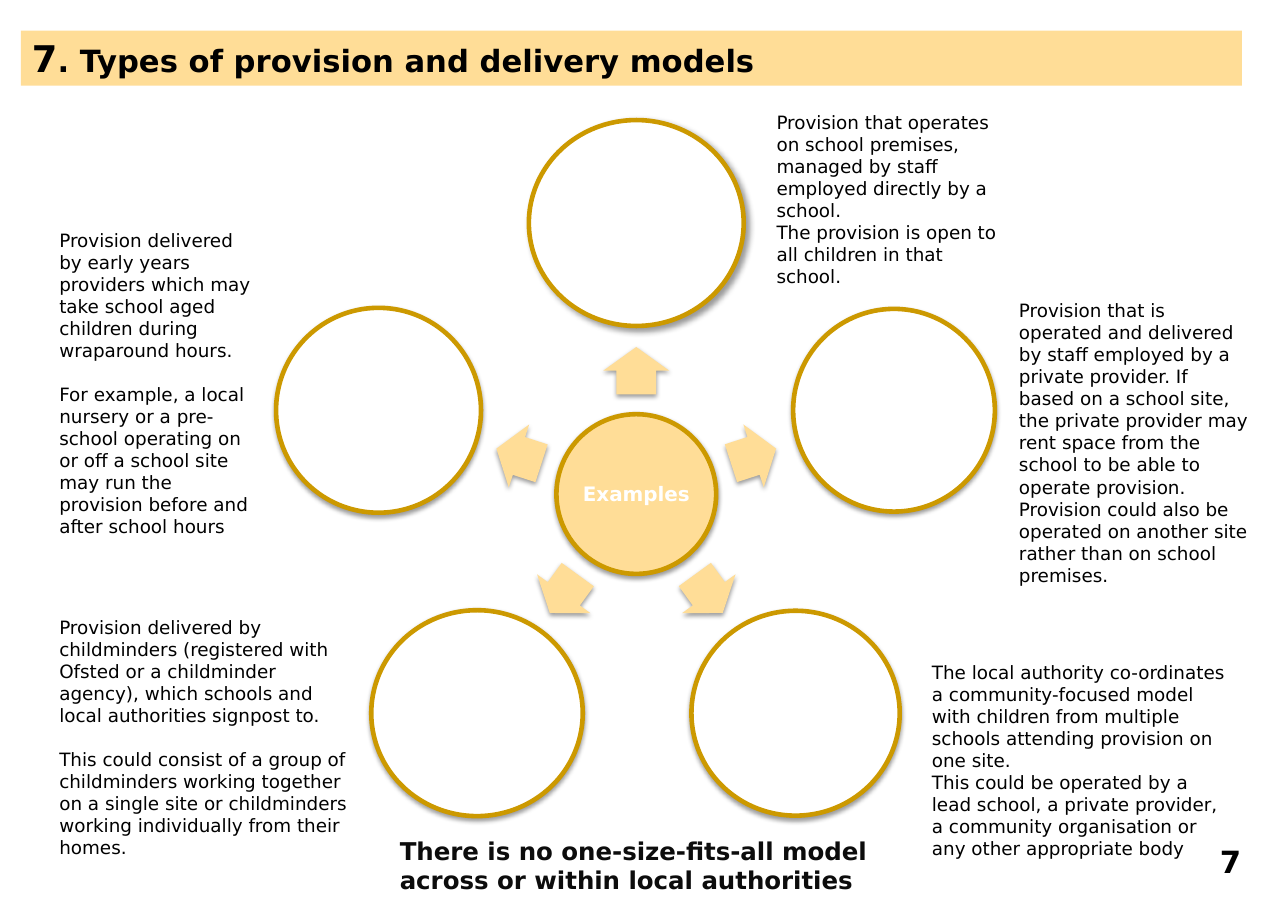
"""Builds the slide on types of provision and delivery models."""
import math

from lxml import etree
from pptx import Presentation
from pptx.dml.color import RGBColor
from pptx.enum.shapes import MSO_SHAPE
from pptx.enum.text import MSO_ANCHOR, MSO_AUTO_SIZE, PP_ALIGN
from pptx.oxml.ns import qn
from pptx.util import Pt

OVAL, ARROW = MSO_SHAPE.OVAL, MSO_SHAPE.RIGHT_ARROW
TOP, MIDDLE = MSO_ANCHOR.TOP, MSO_ANCHOR.MIDDLE
LEFT, CENTER = PP_ALIGN.LEFT, PP_ALIGN.CENTER
NO_FIT = MSO_AUTO_SIZE.NONE

SAND = RGBColor(0xFF, 0xDD, 0x97)
OCHRE = RGBColor(0xCC, 0x99, 0x00)
WHITE = RGBColor(0xFF, 0xFF, 0xFF)
BLACK = RGBColor(0x00, 0x00, 0x00)
INK = RGBColor(0x0C, 0x0C, 0x0C)

FONT = "DejaVu Sans"
SOFT_SHADOW = (38, 3.1, 1.6, 90)
DEEP_SHADOW = (40, 4, 3, 45)

HUB_X, HUB_Y, HUB_SIZE = 415.8, 322.9, 104.4
ARROW_ORBIT, CIRCLE_ORBIT = 80.6, 177.1
ARROW_WIDTH, ARROW_HEIGHT = 31, 43.2

SATELLITES = [
    (140.4, 134.6, DEEP_SHADOW),
    (131.8, 132.5, SOFT_SHADOW),
    (136.1, 133.9, SOFT_SHADOW),
    (138.2, 134.6, SOFT_SHADOW),
    (133.9, 133.9, SOFT_SHADOW),
]

NOTES = [
    ((500.4, 69.1, 158.4, 123.8), 0, [
        "Provision that operates on school premises, managed by staff employed "
        "directly by a school.",
        "The provision is open to all children in that school."]),
    ((658.8, 192.2, 164.2, 196.6), 0, [
        "Provision that is operated and delivered by staff employed by a private "
        "provider. If based on a school site, the private provider may rent space "
        "from the school to be able to operate provision. Provision could also be "
        "operated on another site rather than on school premises."]),
    ((601.9, 428.4, 210.2, 138.2), 0, [
        "The local authority co-ordinates a community-focused model with children "
        "from multiple schools attending provision on one site.",
        "This could be operated by a lead school, a private provider, a community "
        "organisation or any other appropriate body"]),
    ((31.7, 398.9, 208.8, 167), 14.4, [
        "Provision delivered by childminders (registered with Ofsted or a "
        "childminder agency), which schools and local authorities signpost to.",
        "This could consist of a group of childminders working together on a single "
        "site or childminders working individually from their homes."]),
    ((31.7, 146.2, 140.4, 211), 14.4, [
        "Provision delivered by early years providers which may take school aged "
        "children during wraparound hours.",
        "For example, a local nursery or a pre-school operating on or off a school "
        "site may run the provision before and after school hours"]),
]


class SlideBuilder:
    """Holds the font and the current slide, and adds styled elements."""

    def __init__(self, page, font):
        self.page = page
        self.font = font

    def span(self, para, text, size, color, bold):
        """Add one formatted run."""
        span = para.add_run()
        span.text = text
        span.font.name = self.font
        span.font.size = Pt(size)
        span.font.bold = bold
        span.font.color.rgb = color

    def frame(self, box, anchor):
        """Prepare the text frame of a box."""
        frame = box.text_frame
        frame.word_wrap = True
        frame.auto_size = NO_FIT
        frame.vertical_anchor = anchor
        return frame

    def title(self, place, spans):
        """Turn the title placeholder into a filled banner."""
        box = self.page.shapes.title
        box.left, box.top, box.width, box.height = map(Pt, place)
        box.fill.solid()
        box.fill.fore_color.rgb = SAND
        para = self.frame(box, MIDDLE).paragraphs[0]
        para.alignment = LEFT
        for text, size in spans:
            self.span(para, text, size, BLACK, True)

    def text(self, place, lines, size=12, color=BLACK, bold=False, gap=0, align=LEFT):
        """Add a text box with one paragraph per line."""
        box = self.page.shapes.add_textbox(*map(Pt, place))
        frame = self.frame(box, TOP)
        for index, line in enumerate(lines):
            para = frame.add_paragraph() if index else frame.paragraphs[0]
            para.alignment = align
            para.space_before = Pt(gap if index else 0)
            self.span(para, line, size, color, bold)

    def shape(self, kind, center, size, fill, shadow, outline=None):
        """Add a preset shape around a centre point."""
        (x, y), (width, height) = center, size
        box = self.page.shapes.add_shape(
            kind, Pt(x - width / 2), Pt(y - height / 2), Pt(width), Pt(height))
        box.fill.solid()
        box.fill.fore_color.rgb = fill
        if outline:
            box.line.color.rgb = outline
            box.line.width = Pt(3)
        else:
            box.line.fill.background()
        self.shadow(box, *shadow)
        return box

    def shadow(self, box, opacity, blur, distance, angle):
        """Give a shape a black outer shadow."""
        box.shadow.inherit = False
        effects = box.element.spPr.find(qn("a:effectLst"))
        outer = etree.SubElement(
            effects, qn("a:outerShdw"), blurRad=str(Pt(blur)), dist=str(Pt(distance)),
            dir=str(angle * 60000), algn="ctr", rotWithShape="0")
        tint = etree.SubElement(outer, qn("a:srgbClr"), val=str(BLACK))
        etree.SubElement(tint, qn("a:alpha"), val=str(opacity * 1000))

    def circle(self, center, size, fill, shadow=SOFT_SHADOW):
        """Add an outlined circle."""
        return self.shape(OVAL, center, size, fill, shadow, OCHRE)

    def arrow(self, center, angle):
        """Add a block arrow pointing along an angle."""
        box = self.shape(ARROW, center, (ARROW_WIDTH, ARROW_HEIGHT), SAND, SOFT_SHADOW)
        box.adjustments[0] = 0.6
        box.adjustments[1] = 0.5
        box.rotation = angle

    def label(self, box, text, size, color):
        """Write a bold centred label in a shape."""
        frame = self.frame(box, MIDDLE)
        frame.margin_left = frame.margin_right = 0
        para = frame.paragraphs[0]
        para.alignment = CENTER
        self.span(para, text, size, color, True)


def orbit(radius, angle):
    """Return the point at an angle and distance from the hub."""
    turn = math.radians(angle)
    return HUB_X + radius * math.cos(turn), HUB_Y + radius * math.sin(turn)


def main():
    """Build and save the deck."""
    deck = Presentation()
    deck.slide_width, deck.slide_height = Pt(841.68), Pt(595.44)
    page = deck.slides.add_slide(deck.slide_layouts.get_by_name("Title Only"))
    builder = SlideBuilder(page, FONT)

    builder.title((13.7, 20, 797.8, 36),
                  [("7", 24), (". Types of provision and delivery models", 20)])

    hub = builder.circle((HUB_X, HUB_Y), (HUB_SIZE, HUB_SIZE), SAND)
    builder.label(hub, "Examples", 13, WHITE)
    for index, (width, height, shadow) in enumerate(SATELLITES):
        angle = (270 + index * 360 / len(SATELLITES)) % 360
        builder.arrow(orbit(ARROW_ORBIT, angle), angle)
        builder.circle(orbit(CIRCLE_ORBIT, angle), (width, height), WHITE, shadow)

    for place, gap, lines in NOTES:
        builder.text(place, lines, gap=gap)
    builder.text((254.2, 542.9, 334.1, 46.1),
                 ["There is no one-size-fits-all model",
                  "across or within local authorities"], 16, INK, True)
    builder.text((784.8, 547.2, 38.9, 31.7), ["7"], 20, BLACK, True, align=CENTER)
    deck.save("out.pptx")


if __name__ == "__main__":
    main()
